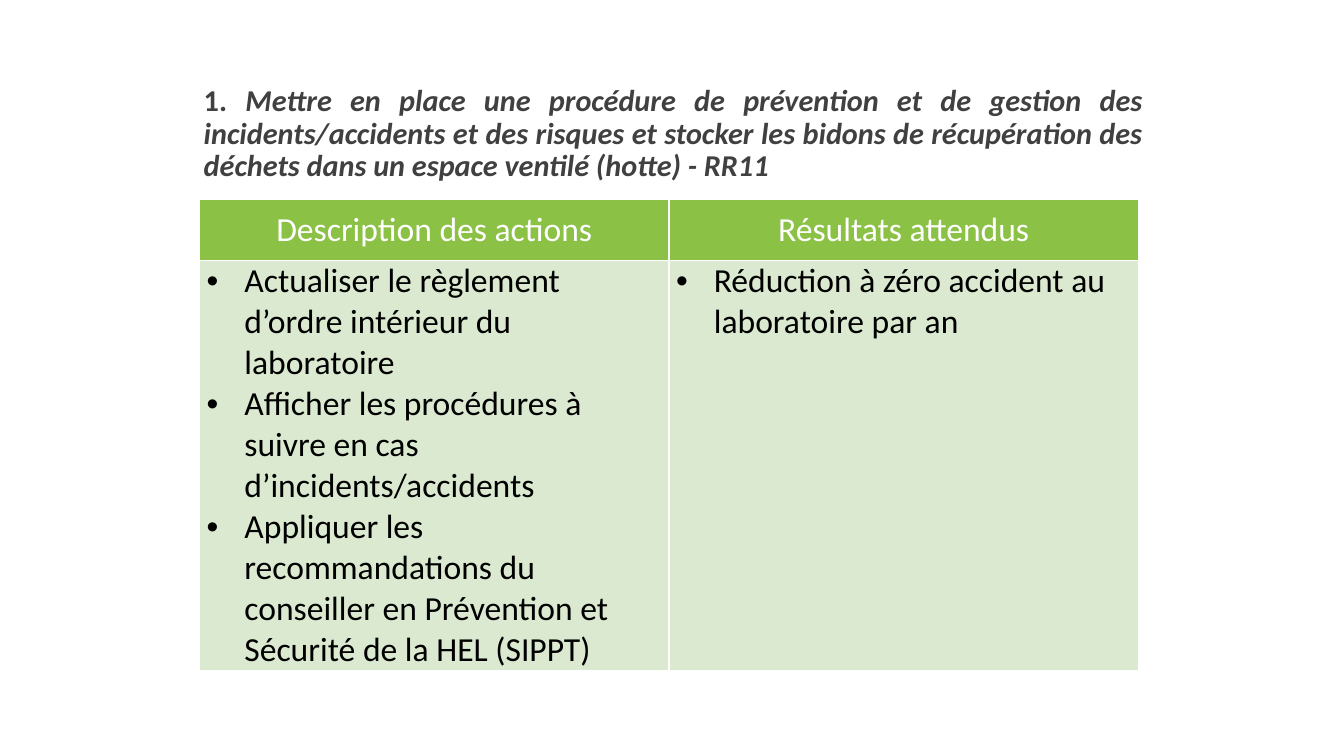
"""Build the slide on the laboratory's incident and accident procedure."""
import pptx
import pptx.dml.color
import pptx.enum.text
import pptx.oxml.ns
import pptx.util
from lxml import etree

Cm = pptx.util.Cm
Pt = pptx.util.Pt
Align = pptx.enum.text.PP_ALIGN
Anchor = pptx.enum.text.MSO_ANCHOR

COLOURS = {
    "title": "404040",
    "header": "8BC145",
    "body": "DAE9CF",
    "white": "FFFFFF",
    "black": "000000",
}
TITLE_FONT = {"name": "Calibri", "size": Pt(21.6), "bold": True}
TABLE_FONT = {"name": "Calibri", "size": Pt(24), "bold": False}
HEADER_MARGIN = Cm(0.25)
BODY_SIDE_MARGIN = Cm(0.18)
BULLET_INDENT = Cm(0.95)

TITLE_SPANS = [
    ("1. ", False),
    ("Mettre en place une procédure de prévention et de gestion des "
     "incidents/accidents et des risques et stocker les bidons de récupération "
     "des déchets dans un espace ventilé (hotte) - RR11", True),
]
COLUMNS = [
    ("Description des actions", [
        "Actualiser le règlement d’ordre intérieur du laboratoire",
        "Afficher les procédures à suivre en cas d’incidents/accidents",
        "Appliquer les recommandations du conseiller en Prévention et "
        "Sécurité de la HEL (SIPPT)",
    ]),
    ("Résultats attendus", [
        "Réduction à zéro accident au laboratoire par an",
    ]),
]


def colour(name):
    return pptx.dml.color.RGBColor.from_string(COLOURS[name])


def apply_format(target, values):
    for name, value in values.items():
        setattr(target, name, value)


def add_span(para, text, font, colour_name, italic=False):
    span = para.add_run()
    span.text = text
    apply_format(span.font, {**font, "italic": italic})
    span.font.color.rgb = colour(colour_name)


def add_child(parent, tag, **attributes):
    return etree.SubElement(parent, pptx.oxml.ns.qn(tag), attributes)


def add_bullet(para):
    properties = para._p.get_or_add_pPr()
    properties.set("marL", str(BULLET_INDENT))
    properties.set("indent", str(-BULLET_INDENT))
    add_child(properties, "a:buFont", typeface="Arial")
    add_child(properties, "a:buChar", char="•")


def add_borders(cell):
    properties = cell._tc.get_or_add_tcPr()
    for side in ("L", "R", "T", "B"):
        line = add_child(properties, f"a:ln{side}", w=str(Pt(1)))
        fill = add_child(line, "a:solidFill")
        add_child(fill, "a:srgbClr", val=COLOURS["white"])


def format_cell(cell, fill_name, side, end):
    add_borders(cell)
    cell.fill.solid()
    cell.fill.fore_color.rgb = colour(fill_name)
    apply_format(cell, {
        "margin_left": side, "margin_right": side,
        "margin_top": end, "margin_bottom": end,
        "vertical_anchor": Anchor.TOP,
    })


def fill_title(title):
    apply_format(title, {"left": Cm(4.88), "top": Cm(1.9),
                         "width": Cm(24.18), "height": Cm(2.97)})
    apply_format(title.text_frame, {
        "word_wrap": True,
        "auto_size": pptx.enum.text.MSO_AUTO_SIZE.NONE,
        "vertical_anchor": Anchor.MIDDLE,
    })
    para = title.text_frame.paragraphs[0]
    apply_format(para, {"alignment": Align.JUSTIFY, "line_spacing": 0.9})
    for text, italic in TITLE_SPANS:
        add_span(para, text, TITLE_FONT, "title", italic)


def fill_header(cell, text):
    format_cell(cell, "header", HEADER_MARGIN, HEADER_MARGIN)
    para = cell.text_frame.paragraphs[0]
    para.alignment = Align.CENTER
    add_span(para, text, TABLE_FONT, "white")


def fill_list(cell, items):
    format_cell(cell, "body", BODY_SIDE_MARGIN, 0)
    frame = cell.text_frame
    for index, item in enumerate(items):
        para = frame.add_paragraph() if index else frame.paragraphs[0]
        para.alignment = Align.LEFT
        add_bullet(para)
        add_span(para, item, TABLE_FONT, "black")


def add_action_table(page):
    table = page.shapes.add_table(2, len(COLUMNS), Cm(5.03), Cm(5.03),
                                  Cm(23.66), Cm(11.68)).table
    for row, height in zip(table.rows, (Cm(1.52), Cm(10.16))):
        row.height = height
    for index, (heading, items) in enumerate(COLUMNS):
        fill_header(table.cell(0, index), heading)
        fill_list(table.cell(1, index), items)


def main():
    deck = pptx.Presentation()
    apply_format(deck, {"slide_width": Cm(33.87), "slide_height": Cm(19.05)})
    page = deck.slides.add_slide(deck.slide_layouts[5])
    page.background.fill.solid()
    page.background.fill.fore_color.rgb = colour("white")
    fill_title(page.shapes.title)
    add_action_table(page)
    deck.save("out.pptx")


if __name__ == "__main__":
    main()
